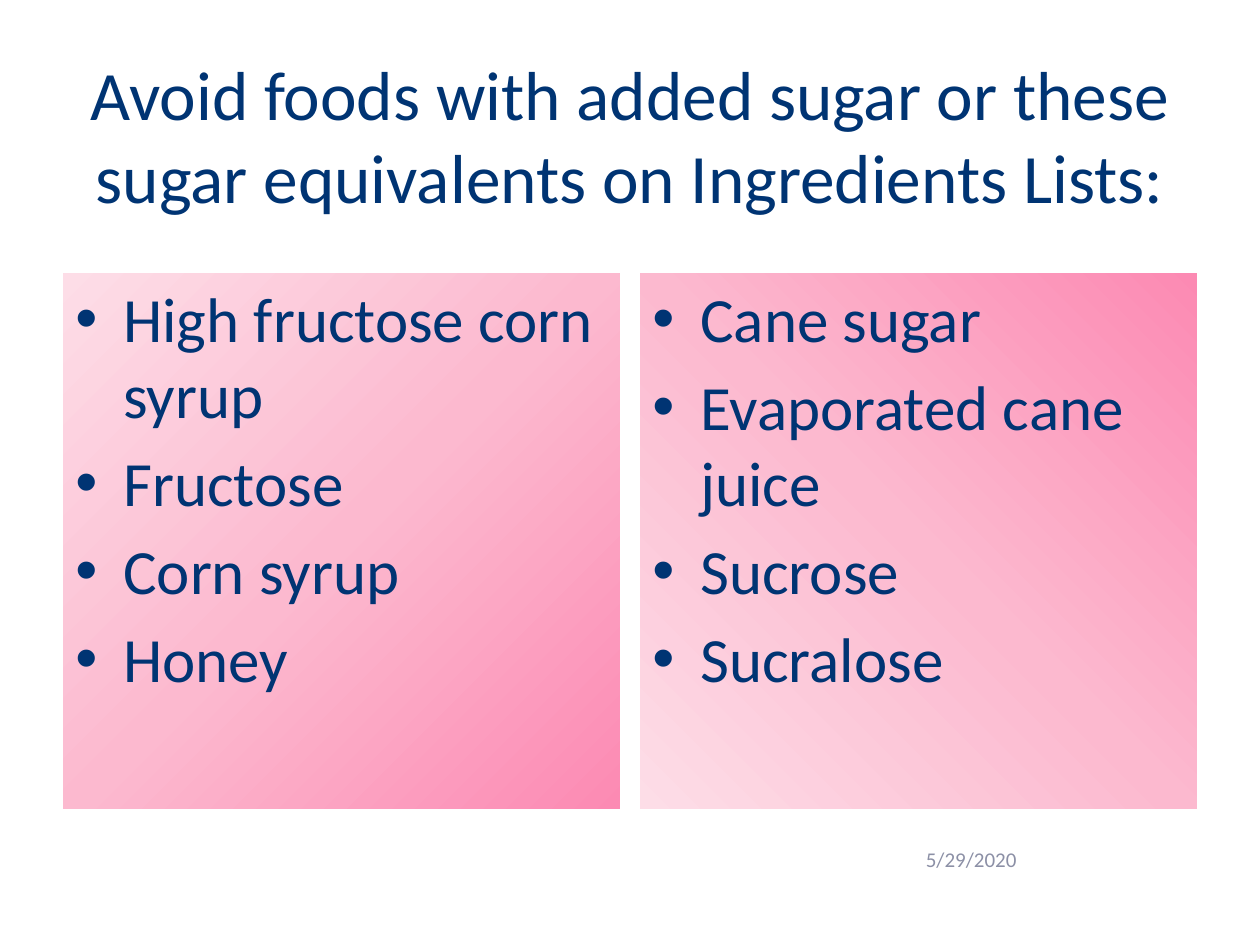
from lxml.etree import SubElement as Sub
from pptx import Presentation
from pptx.dml.color import RGBColor as RGB
from pptx.enum.shapes import MSO_SHAPE as Kind
from pptx.enum.text import MSO_ANCHOR as Anchor, PP_ALIGN as Align
from pptx.oxml.ns import qn
from pptx.util import Inches, Pt

# Content
TITLE = "Avoid foods with added sugar or these sugar equivalents on Ingredients Lists:"
DATE = "5/29/2020"
# Each panel: gradient direction in degrees clockwise, then its items
PANELS = [
    (225, ["High fructose corn syrup", "Fructose", "Corn syrup", "Honey"]),
    (135, ["Cane sugar", "Evaporated cane juice", "Sucrose", "Sucralose"]),
]

THEME = {
    "title": {"name": "Calibri", "size": Pt(39.6), "color": "003473"},
    "item": {"name": "Calibri", "size": Pt(36), "color": "003473"},
    "date": {"name": "Calibri", "size": Pt(12), "color": "8C90A6"},
    "stops": [(0, "FC8AB3"), (50, "FCB9CF"), (100, "FDDDE7")],
}

# Grid in inches
WIDE, HIGH = 10, 7.5
EDGE, GAP = WIDE * 0.05, 0.16
TOP, TALL = 2.17, 4.25
COL = (WIDE - 2 * EDGE - GAP) / len(PANELS)
INDENT = 0.38


def style(para, look):
    for key, value in look.items():
        if key == "color":
            para.font.color.rgb = RGB.from_string(value)
        else:
            setattr(para.font, key, value)


def write(slide, text, box, look, align):
    frame = slide.shapes.add_textbox(*map(Inches, box)).text_frame
    frame.word_wrap = True
    frame.vertical_anchor = Anchor.MIDDLE
    para = frame.paragraphs[0]
    para.text, para.alignment = text, align
    style(para, look)


def shade(shape, angle):
    shape.fill.gradient()
    grad = shape.fill._fill._gradFill
    for child in list(grad):
        grad.remove(child)
    stops = Sub(grad, qn("a:gsLst"))
    for pos, tint in THEME["stops"]:
        stop = Sub(stops, qn("a:gs"), pos=str(pos * 1000))
        Sub(stop, qn("a:srgbClr"), val=tint)
    Sub(grad, qn("a:lin"), ang=str(angle * 60000), scaled="0")


def bullet(para):
    props = para._p.get_or_add_pPr()
    props.set("marL", str(Inches(INDENT)))
    props.set("indent", str(-Inches(INDENT)))
    Sub(props, qn("a:buFont"), typeface="Arial")
    Sub(props, qn("a:buChar"), char="•")


def panel(slide, left, angle, items):
    box = map(Inches, (left, TOP, COL, TALL))
    shape = slide.shapes.add_shape(Kind.RECTANGLE, *box)
    shape.shadow.inherit = False
    shape.line.fill.background()
    shade(shape, angle)
    frame = shape.text_frame
    frame.word_wrap = True
    frame.vertical_anchor = Anchor.TOP
    for row, item in enumerate(items):
        para = frame.add_paragraph() if row else frame.paragraphs[0]
        para.text, para.alignment = item, Align.LEFT
        bullet(para)
        if row:
            para.space_before = Pt(7.2)
        style(para, THEME["item"])


def main():
    deck = Presentation()
    deck.slide_width, deck.slide_height = Inches(WIDE), Inches(HIGH)
    slide = deck.slides.add_slide(deck.slide_layouts[6])

    # Heading
    write(slide, TITLE, (EDGE, 0.3, WIDE - 2 * EDGE, 1.53),
          THEME["title"], Align.CENTER)

    # Two sugar lists
    for col, (angle, items) in enumerate(PANELS):
        panel(slide, EDGE + col * (COL + GAP), angle, items)

    # Date
    write(slide, DATE, (7.25, 6.62, 2.33, 0.4), THEME["date"], Align.LEFT)
    deck.save("out.pptx")


if __name__ == "__main__":
    main()
